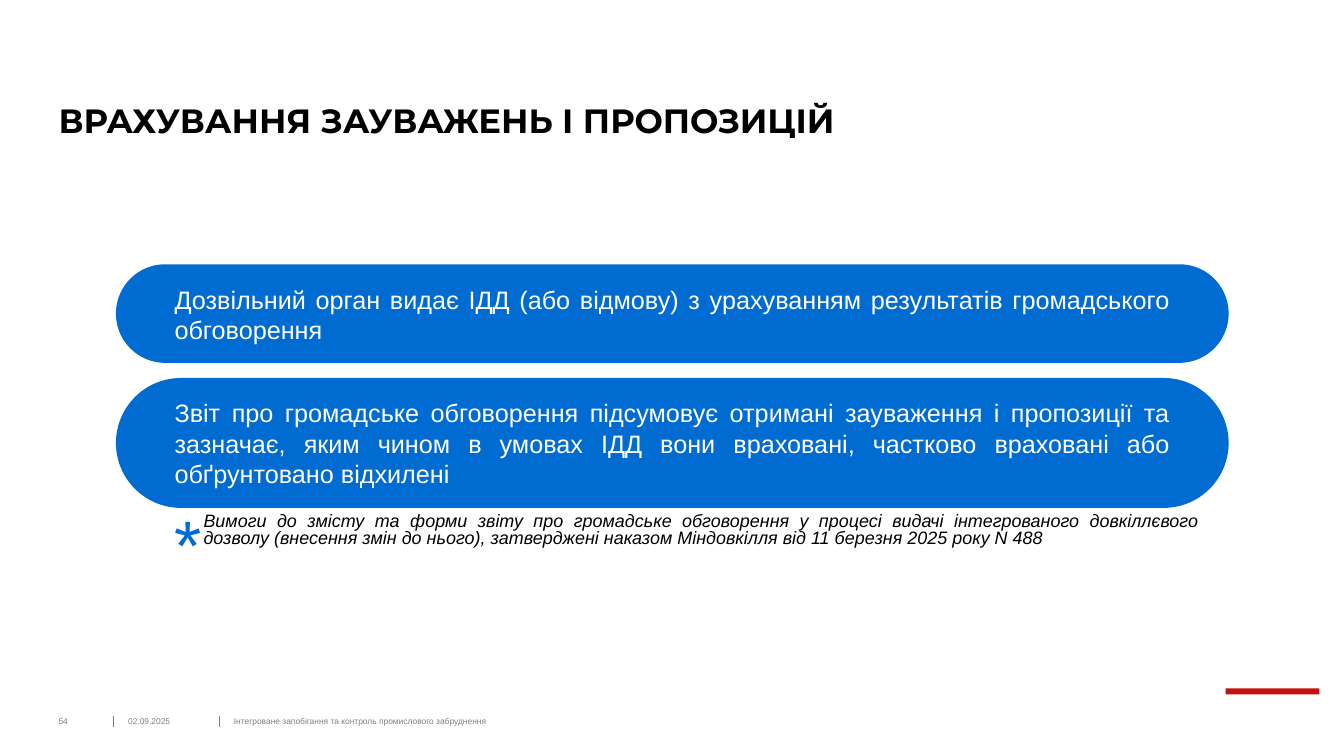
from dataclasses import dataclass

import pptx
import pptx.dml.color
import pptx.enum.shapes
import pptx.enum.text
import pptx.oxml
import pptx.util
from pptx.util import Pt

ALIGN = pptx.enum.text.PP_ALIGN
ANCHOR = pptx.enum.text.MSO_ANCHOR
SHAPES = pptx.enum.shapes.MSO_SHAPE


@dataclass(frozen=True)
class Theme:
    blue: str = "006CD2"
    red: str = "C80F0F"
    grey: str = "7F7F7F"
    black: str = "000000"
    white: str = "FFFFFF"
    heading_font: str = "Montserrat"
    body_font: str = "Arial"
    title_size: float = 24
    body_size: float = 18
    note_size: float = 12.8
    star_size: float = 50
    footer_size: float = 6


THEME = Theme()
INSETS = (7.2, 3.6)


def rgb(value):
    return pptx.dml.color.RGBColor.from_string(value)


def add_text(slide, box, text, size, color, font=THEME.body_font, insets=INSETS,
             anchor=ANCHOR.TOP, align=ALIGN.LEFT, spacing=1.0, bold=False, italic=False):
    """Add a one-paragraph text box; box is left, top, width, height in points."""
    text_frame = slide.shapes.add_textbox(*map(Pt, box)).text_frame
    text_frame.word_wrap = True
    text_frame.vertical_anchor = anchor
    text_frame.margin_left = text_frame.margin_right = Pt(insets[0])
    text_frame.margin_top = text_frame.margin_bottom = Pt(insets[1])
    text_frame.text = text
    paragraph = text_frame.paragraphs[0]
    paragraph.alignment = align
    paragraph.line_spacing = spacing
    run_font = paragraph.runs[0].font
    run_font.name = font
    run_font.size = Pt(size)
    run_font.bold = bold
    run_font.italic = italic
    run_font.color.rgb = rgb(color)


def add_block(slide, kind, box, color):
    shape = slide.shapes.add_shape(kind, *map(Pt, box))
    shape.shadow.inherit = False
    shape.fill.solid()
    shape.fill.fore_color.rgb = rgb(color)
    shape.line.fill.background()
    return shape


def add_title(slide, box, text):
    add_text(slide, box, text, THEME.title_size, THEME.black, font=THEME.heading_font,
             insets=(0, 0), anchor=ANCHOR.BOTTOM, spacing=0.9, bold=True)


def add_pill(slide, box, text):
    """Add a fully rounded bar with justified text inside it."""
    left, top, width, height = box
    pill = add_block(slide, SHAPES.ROUNDED_RECTANGLE, box, THEME.blue)
    pill.adjustments[0] = 0.5
    side, above = 34.8, 10.6
    text_box = (left + side, top + above, width - 2 * side, height - 2 * above)
    add_text(slide, text_box, text, THEME.body_size, THEME.white, align=ALIGN.JUSTIFY)


def add_footnote(slide, box, text):
    """Add a large asterisk at the left of the box and the note beside it."""
    left, top, width, height = box
    indent, drop = 20.9, 9.4
    add_text(slide, (left + indent, top + drop, width - indent, 48), text,
             THEME.note_size, THEME.black, align=ALIGN.JUSTIFY, spacing=0.8, italic=True)
    add_text(slide, (left, top, 37.4, height), "*", THEME.star_size, THEME.blue)


def add_footer(slide, box, fields):
    """Add small fields, given as (offset, width, text), with a rule before all but the first."""
    left, top, _, height = box
    for index, (offset, width, text) in enumerate(fields):
        x = left + offset
        add_text(slide, (x, top, width, height), text, THEME.footer_size, THEME.grey,
                 insets=(0, 0), anchor=ANCHOR.MIDDLE)
        if index:
            rule_x = Pt(x - 10.1)
            rule = slide.shapes.add_connector(
                pptx.enum.shapes.MSO_CONNECTOR.STRAIGHT,
                rule_x, Pt(top), rule_x, Pt(top + 8))
            rule.line.color.rgb = rgb(THEME.grey)
            rule.line.width = Pt(0.75)
            properties = rule._element.spPr
            properties.append(pptx.oxml.parse_xml(
                '<a:effectLst xmlns:a="http://schemas.openxmlformats.org/drawingml/2006/main"/>'))


def main():
    presentation = pptx.Presentation()
    presentation.slide_width, presentation.slide_height = Pt(960), Pt(540)
    slide = presentation.slides.add_slide(presentation.slide_layouts[6])

    add_title(slide, (41.8, 28.8, 578, 72), "ВРАХУВАННЯ ЗАУВАЖЕНЬ І ПРОПОЗИЦІЙ")
    add_pill(slide, (82.8, 188.8, 794.8, 70.4),
             "Дозвільний орган видає ІДД (або відмову) з урахуванням результатів "
             "громадського обговорення")
    add_pill(slide, (82.8, 270, 794.8, 92.8),
             "Звіт про громадське обговорення підсумовує отримані зауваження і пропозиції "
             "та зазначає, яким чином в умовах ІДД вони враховані, частково враховані або "
             "обґрунтовано відхилені")
    add_footnote(slide, (117.4, 354.2, 745.9, 67.7),
                 "Вимоги до змісту та форми звіту про громадське обговорення у процесі видачі "
                 "інтегрованого довкіллєвого дозволу (внесення змін до нього), затверджені "
                 "наказом Міндовкілля від 11 березня 2025 року N 488")
    add_block(slide, SHAPES.RECTANGLE, (875.5, 491.8, 67, 4.3), THEME.red)
    add_footer(slide, (41.8, 511.2, 664, 7.2), (
        (0, 36.7, "54"),
        (49.7, 56.9, "02.09.2025"),
        (125.3, 538.6, "Інтегроване запобігання та контроль промислового забруднення"),
    ))
    presentation.save("out.pptx")


if __name__ == "__main__":
    main()
